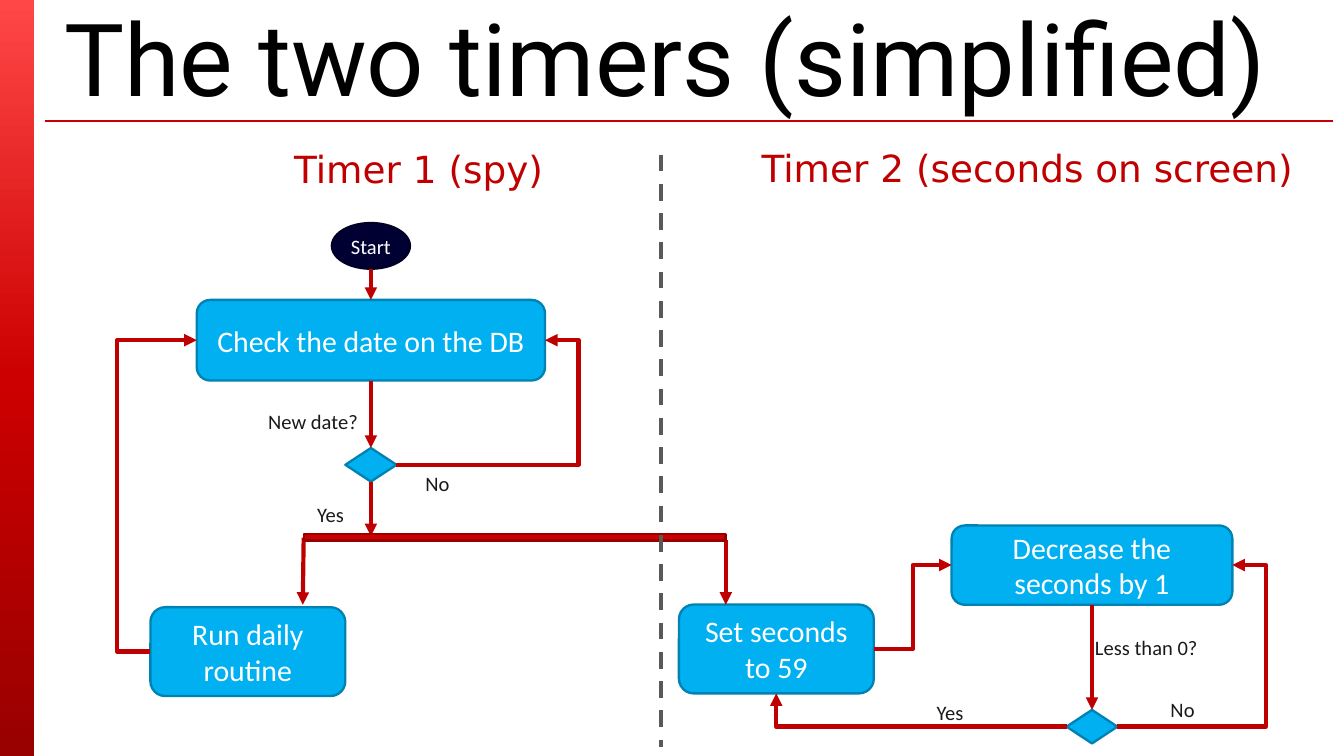
"""Build a flowchart slide showing how two timers work together."""
from copy import deepcopy
from lxml.etree import SubElement
from pptx import Presentation
from pptx.dml.color import RGBColor as RGB
from pptx.enum.dml import MSO_LINE as DASH
from pptx.enum.shapes import MSO_CONNECTOR as CONN, MSO_SHAPE as SHAPE
from pptx.enum.text import MSO_ANCHOR as ANCHOR, PP_ALIGN as ALIGN
from pptx.oxml.ns import qn
from pptx.util import Pt

THEME = {
    "fade": [(0, "FF4747"), (0.5, "CC0000"), (1, "990000")],
    "rule": "C80000", "arrow": "BF0000", "split": "595959",
    "title": ("Roboto", 54, "000000"),
    "head": ("DejaVu Sans", 20, "C00000"),
    "step": ("Calibri", 16, "FFFFFF"),
    "start": ("Calibri", 11, "FFFFFF"),
    "label": ("Calibri", 11, "1A1A1A"),
}
LOOKS = {
    "step": (SHAPE.ROUNDED_RECTANGLE, "00B0F0", "0082B2"),
    "test": (SHAPE.DIAMOND, "00B0F0", "0082B2"),
    "start": (SHAPE.OVAL, "000032", "000025"),
    "bar": (SHAPE.RECTANGLE, "CC0000", "970000"),
    "label": (SHAPE.RECTANGLE, "FFFFFF", None),
}
TITLE = ("The two timers (simplified)", (27.4, 10.8, 689.8, 38.2))
HEADS = [
    ("Timer 1 (spy)", (150.5, 74.9, 153.4, 31.7)),
    ("Timer 2 (seconds on screen)", (401, 74.2, 304.6, 31.7)),
]
NODES = {
    "start": ("start", "Start", (177.8, 119.5, 41.8, 24.5)),
    "check": ("step", "Check the date on the DB", (105.4, 160.7, 186.6, 43.2)),
    "new": ("test", "", (185, 240, 27.4, 18)),
    "run": ("step", "Run daily routine", (80.6, 325.3, 104.4, 47.6)),
    "set": ("step", "Set seconds to 59", (363.7, 323.9, 104.4, 47.6)),
    "drop": ("step", "Decrease the seconds by 1", (509.8, 281.5, 150.4, 42.5)),
    "zero": ("test", "", (571.4, 380.3, 27.2, 18)),
}
LABELS = [
    ("New date?", (129.6, 219, 76.3, 13.7)),
    ("No", (217.5, 252.2, 33.8, 13.7)),
    ("Yes", (160.2, 268.6, 33.8, 13.7)),
    ("Less than 0?", (576, 340, 76.3, 13.7)),
    ("No", (617, 373, 33.1, 13.7)),
    ("Yes", (492.1, 374.6, 33.8, 13.7)),
]
BAR = (162.7, 286, 226.1, 3.6)
JOINS = [("start", "check"), ("check", "new"), ("drop", "zero")]
DROPS = [
    ((198.7, 258), (198.7, 287.2)),
    ((162.7, 288), (162.2, 324)),
    ((388.8, 289.4), (388.8, 324)),
]
BENDS = [
    ("new", 3, "check", 3, 310),
    ("zero", 3, "drop", 3, 678.2),
    ("run", 1, "check", 1, 62.7),
    ("set", 3, "drop", 1, 489),
    ("zero", 1, "set", 2, None),
]


def tint(obj, code):
    obj.fill.solid()
    obj.fill.fore_color.rgb = RGB.from_string(code)


def write(frame, text, style, **form):
    face, size, code = THEME[style]
    for key, val in form.items():
        setattr(frame, key, val)
    para = frame.paragraphs[0]
    para.text = text
    for key, val in {"name": face, "size": Pt(size)}.items():
        setattr(para.font, key, val)
    para.font.color.rgb = RGB.from_string(code)
    return para


def draw(look, text, box):
    kind, fill, edge = LOOKS[look]
    item = shapes.add_shape(kind, *map(Pt, box))
    item.shadow.inherit = False
    tint(item, fill)
    if edge:
        tint(item.line, edge)
        item.line.width = Pt(1.25)
    else:
        item.line.fill.background()
    if text:
        form = {"word_wrap": True, "vertical_anchor": ANCHOR.MIDDLE}
        if look != "step":
            form |= {"margin_" + side: 0 for side in ("left", "right", "top", "bottom")}
        write(item.text_frame, text, look, **form).alignment = ALIGN.CENTER
    return item


def note(text, box, style, **form):
    write(shapes.add_textbox(*map(Pt, box)).text_frame, text, style, **form)


def link(start, end, kind=CONN.STRAIGHT, code="arrow", width=2.25, tip=True):
    line = shapes.add_connector(kind, *map(Pt, start + end))
    tint(line.line, THEME[code])
    line.line.width = Pt(width)
    SubElement(line._element.spPr, qn("a:effectLst"))
    if tip:
        SubElement(line.line._get_or_add_ln(), qn("a:tailEnd"), type="triangle")
    return line


def port(name, side):
    left, top, wide, high = NODES[name][2]
    mid, row = left + wide / 2, top + high / 2
    return [(mid, top), (left, row), (mid, top + high), (left + wide, row)][side]


def bend(src, out, dst, into, turn):
    start, end = port(src, out), port(dst, into)
    line = link(start, end, CONN.ELBOW)
    geom = line._element.spPr.find(qn("a:prstGeom"))
    if turn is None:
        geom.set("prst", "bentConnector2")
    else:
        ratio = (turn - start[0]) / (end[0] - start[0])
        guides = geom.find(qn("a:avLst"))
        if guides is None:
            guides = SubElement(geom, qn("a:avLst"))
        SubElement(guides, qn("a:gd"), name="adj1", fmla=f"val {round(ratio * 100000)}")


def stripe():
    band = draw("label", "", (0, 0, 18.2, 405))
    band.fill.gradient()
    band.fill.gradient_angle = 270
    stops = band._element.spPr.find(qn("a:gradFill")).find(qn("a:gsLst"))
    stops.append(deepcopy(stops[-1]))
    for stop, (place, code) in zip(band.fill.gradient_stops, THEME["fade"]):
        stop.position = place
        stop.color.rgb = RGB.from_string(code)


deck = Presentation()
deck.slide_width, deck.slide_height = Pt(720), Pt(405)
shapes = deck.slides.add_slide(deck.slide_layouts[6]).shapes

stripe()
link((24, 64.8), (714.2, 64.8), code="rule", width=0.75, tip=False)
note(*TITLE, "title", word_wrap=True, vertical_anchor=ANCHOR.MIDDLE)
nodes = {name: draw(*node) for name, node in NODES.items()}
for text, box in LABELS:
    draw("label", text, box)
for src, dst in JOINS:
    line = link(port(src, 2), port(dst, 0))
    line.begin_connect(nodes[src], 2)
    line.end_connect(nodes[dst], 0)
for ends in DROPS:
    link(*ends)
for way in BENDS:
    bend(*way)
draw("bar", "", BAR)
split = link((354.2, 82.8), (354.2, 400.3), code="split", tip=False)
split.line.dash_style = DASH.DASH
for text, box in HEADS:
    note(text, box, "head", word_wrap=False)

deck.save("out.pptx")
